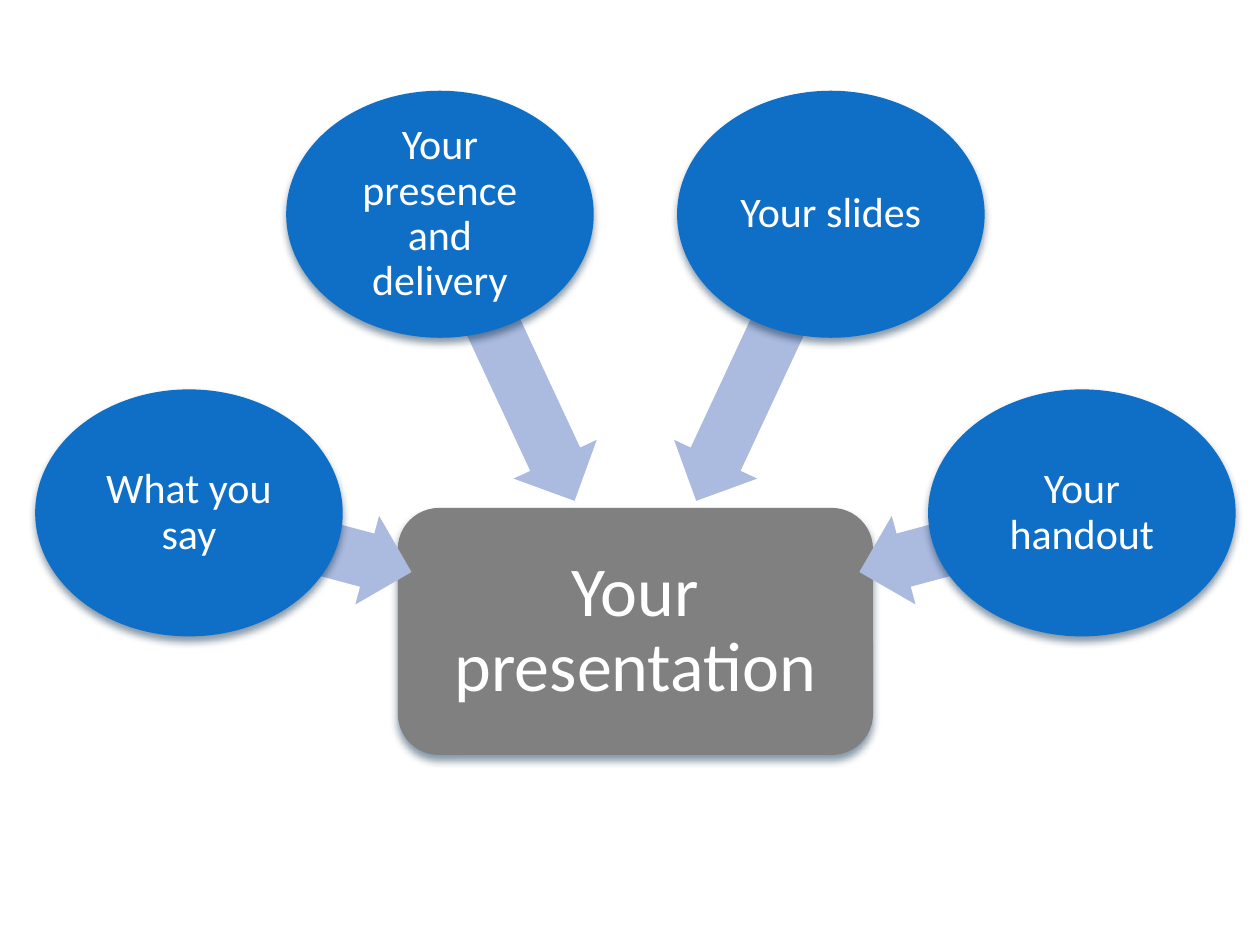
from lxml import etree
from pptx import Presentation
from pptx.dml.color import RGBColor
from pptx.enum import shapes, text
from pptx.oxml import ns
from pptx.util import Cm, Pt

HUES = {"blue": "0F6FC6", "gray": "808080", "arrow": "ABBBDF",
        "shade": "042747", "white": "FFFFFF"}
KIND = shapes.MSO_SHAPE
MID = 12.81  # axis of symmetry, cm
OVAL = (6.2, 4.98)
# label, side, oval (offset, y), arrow (offset, y, length, turn on the left side)
LOW = ((9, 10.34), (6.76, 10.93, 4.65, 195))
HIGH = ((3.94, 4.32), (2.6, 7.15, 6.5, 245))
PARTS = [
    ("What you say", -1, *LOW),
    ("Your presence and delivery", -1, *HIGH),
    ("Your slides", 1, *HIGH),
    ("Your handout", 1, *LOW),
]


def add_form(slide, kind, x, y, size, hue):
    """Add a plain filled shape centred on x, y."""
    wide, high = size
    form = slide.shapes.add_shape(
        kind, Cm(x - wide / 2), Cm(y - high / 2), Cm(wide), Cm(high))
    form.shadow.inherit = False
    form.fill.solid()
    form.fill.fore_color.rgb = RGBColor.from_string(HUES[hue])
    form.line.fill.background()
    return form


def add_shade(form):
    """Add a soft shadow that falls straight down."""
    root = form.element.spPr.find(ns.qn("a:effectLst"))
    outer = etree.SubElement(root, ns.qn("a:outerShdw"), blurRad=str(Pt(4.5)),
                             dist=str(Pt(3)), dir="5400000", rotWithShape="0")
    tone = etree.SubElement(outer, ns.qn("a:srgbClr"), val=HUES["shade"])
    etree.SubElement(tone, ns.qn("a:alpha"), val="48000")


def add_node(slide, kind, x, y, size, hue, label, points, inset):
    node = add_form(slide, kind, x, y, size, hue)
    add_shade(node)
    frame = node.text_frame
    frame.word_wrap = True
    frame.vertical_anchor = text.MSO_ANCHOR.MIDDLE
    frame.margin_left = frame.margin_right = Cm(inset)
    frame.margin_top = frame.margin_bottom = Cm(inset)
    para = frame.paragraphs[0]
    para.text = label
    para.alignment = text.PP_ALIGN.CENTER
    para.line_spacing = 0.9
    para.font.name = "Calibri"
    para.font.size = Pt(points)
    para.font.color.rgb = RGBColor.from_string(HUES["white"])


def add_part(slide, label, side, oval, arrow):
    """Add one arrow to the centre and the oval that covers its tail."""
    shift, y, reach, turn = arrow
    form = add_form(slide, KIND.LEFT_ARROW, MID + side * shift, y,
                    (reach, 1.85), "arrow")
    form.adjustments[0] = 0.6
    form.adjustments[1] = 0.5
    form.rotation = turn if side < 0 else 540 - turn
    shift, y = oval
    add_node(slide, KIND.OVAL, MID + side * shift, y, OVAL, "blue",
             label, 24, 0.13)


def main():
    deck = Presentation()
    deck.slide_width, deck.slide_height = Cm(25.4), Cm(19.05)
    slide = deck.slides.add_slide(deck.slide_layouts[6])
    add_node(slide, KIND.ROUNDED_RECTANGLE, MID, 12.73, (9.58, 4.98), "gray",
             "Your presentation", 40, 0.08)
    for part in PARTS:
        add_part(slide, *part)
    deck.save("out.pptx")


if __name__ == "__main__":
    main()
